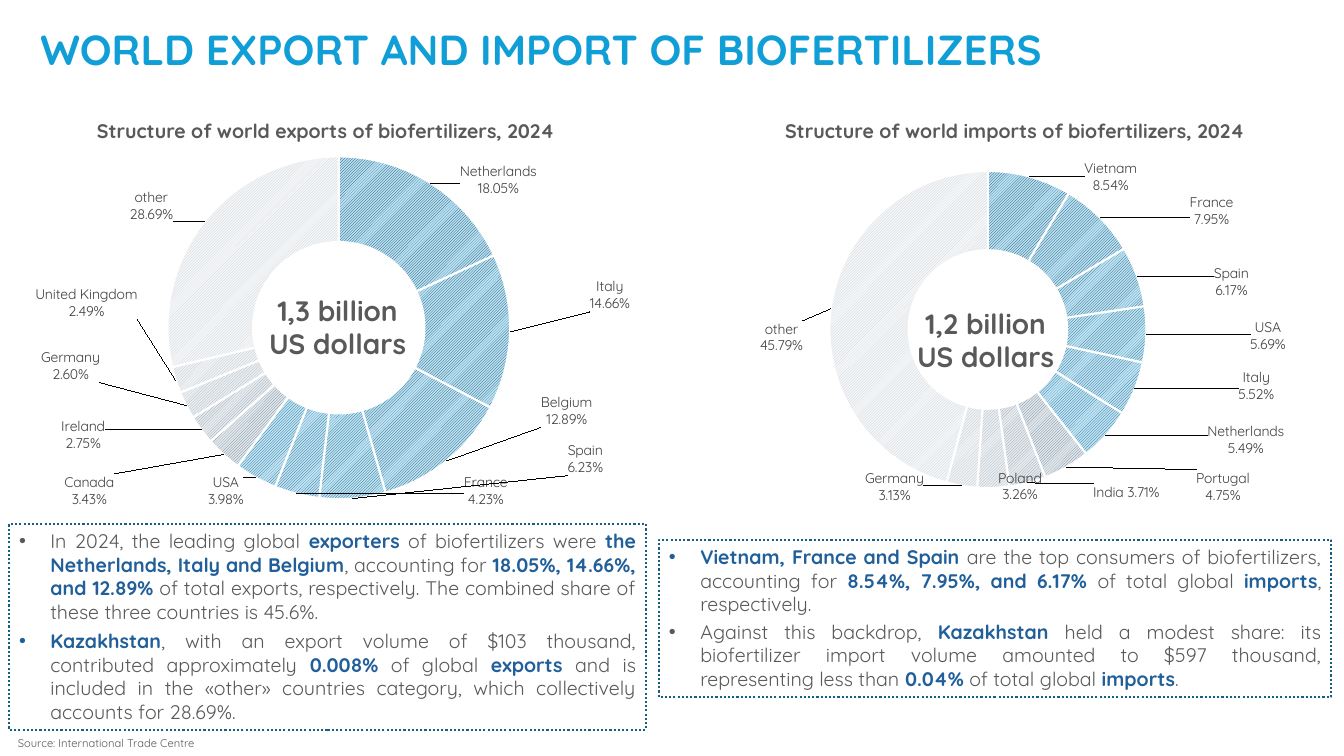
from itertools import accumulate
from math import cos, pi, sin

from lxml import etree
from pptx import Presentation
from pptx import util as u
from pptx.chart import data
from pptx.dml import color
from pptx.enum import chart as ch, dml, shapes, text
from pptx.oxml import parse_xml
from pptx.oxml.ns import nsdecls, qn

GREY, BLUE = "595959", "215F9A"


def rgb(code):
    return color.RGBColor.from_string(code)


def write(frame, lines, size, code=GREY, bold=False, align=text.PP_ALIGN.LEFT,
          bullet=False, after=0):
    """Fill a text frame; parts between asterisks are bold blue."""
    frame.word_wrap = True
    for n, line in enumerate(lines):
        paragraph = frame.paragraphs[0] if n == 0 else frame.add_paragraph()
        if bullet:
            props = paragraph._p.get_or_add_pPr()
            props.set("marL", str(u.Cm(0.79)))
            props.set("indent", str(-u.Cm(0.79)))
            etree.SubElement(props, qn("a:buFont")).set("typeface", "Arial")
            etree.SubElement(props, qn("a:buChar")).set("char", "•")
        paragraph.alignment = align
        paragraph.space_before, paragraph.space_after = u.Pt(0), u.Pt(after)
        for k, part in enumerate(line.split("*")):
            if part:
                run = paragraph.add_run()
                run.text = part
                look = {"name": "Quicksand", "size": u.Pt(size), "bold": bold or k % 2 == 1}
                for key, value in look.items():
                    setattr(run.font, key, value)
                run.font.color.rgb = rgb(BLUE if k % 2 else code)


prs = Presentation()
prs.slide_width, prs.slide_height = u.Cm(33.87), u.Cm(19.05)
slide = prs.slides.add_slide(prs.slide_layouts[5])

# Title
title = slide.shapes.title
title.left, title.top, title.width, title.height = map(u.Cm, (1.02, 0.58, 32.05, 1.32))
margins = {"margin_left": 0, "margin_right": 0, "margin_top": 0, "margin_bottom": 0,
           "vertical_anchor": text.MSO_ANCHOR.MIDDLE}
for key, value in margins.items():
    setattr(title.text_frame, key, value)
write(title.text_frame, ["WORLD EXPORT AND IMPORT OF BIOFERTILIZERS"], 30, "0F9ED5", True)

# Findings in dotted boxes
findings = [
    ((0.23, 13.21, 16.05, 5.18), 4, [
        "In 2024, the leading global *exporters* of biofertilizers were *the Netherlands, Italy "
        "and Belgium*, accounting for *18.05%, 14.66%, and 12.89%* of total exports, "
        "respectively. The combined share of these three countries is 45.6%.",
        "*Kazakhstan*, with an export volume of $103 thousand, contributed approximately "
        "*0.008%* of global *exports* and is included in the «other» countries category, "
        "which collectively accounts for 28.69%."]),
    ((16.61, 13.61, 16.94, 3.96), 3, [
        "*Vietnam, France and Spain *are the top consumers of biofertilizers, accounting for "
        "*8.54%, 7.95%, and 6.17% *of total global *imports*, respectively.",
        "Against this backdrop, *Kazakhstan* held a modest share: its biofertilizer import "
        "volume amounted to $597 thousand, representing less than *0.04%* of total global "
        "*imports*."]),
]
for place, after, lines in findings:
    box = slide.shapes.add_shape(shapes.MSO_SHAPE.RECTANGLE, *map(u.Cm, place))
    box.shadow.inherit = False
    box.fill.background()
    box.line.color.rgb = rgb("156082")
    box.line.width = u.Pt(1.5)
    box.line.dash_style = dml.MSO_LINE.ROUND_DOT
    box.text_frame.vertical_anchor = text.MSO_ANCHOR.TOP
    write(box.text_frame, lines, 14, align=text.PP_ALIGN.JUSTIFY, bullet=True, after=after)

# Chart headings, ring totals and source
CENTER, LEFT = text.PP_ALIGN.CENTER, text.PP_ALIGN.LEFT
captions = [
    ((0.38, 2.87, 15.67, 0.86), ["Structure of world exports of biofertilizers, 2024"], 14, True, CENTER),
    ((17.68, 2.87, 15.8, 0.86), ["Structure of world imports of biofertilizers, 2024"], 14, True, CENTER),
    ((6.25, 7.26, 4.52, 1.96), ["1,3 billion", "US dollars"], 20, True, CENTER),
    ((22.15, 7.59, 5.38, 1.96), ["1,2 billion", "US dollars"], 20, True, CENTER),
    ((0.2, 18.44, 21.31, 0.61), ["Source: International Trade Centre"], 8, False, LEFT),
]
for place, lines, size, bold, align in captions:
    caption = slide.shapes.add_textbox(*map(u.Cm, place))
    write(caption.text_frame, lines, size, bold=bold, align=align)

# Ring charts: country, share, label centre as fractions of the chart frame
exports = [
    ("Netherlands", 0.1805, 0.76, 0.10), ("Italy", 0.1466, 0.94, 0.41),
    ("Belgium", 0.1289, 0.87, 0.72), ("Spain", 0.0623, 0.90, 0.85),
    ("France", 0.0423, 0.74, 0.935), ("USA", 0.0398, 0.32, 0.935),
    ("Canada", 0.0343, 0.10, 0.935), ("Ireland", 0.0275, 0.09, 0.785),
    ("Germany", 0.026, 0.07, 0.60), ("United Kingdom", 0.0249, 0.095, 0.43),
    ("other", 0.2869, 0.20, 0.17),
]
imports = [
    ("Vietnam", 0.0854, 0.705, 0.05), ("France", 0.0795, 0.875, 0.14),
    ("Spain", 0.0617, 0.91, 0.33), ("USA", 0.0569, 0.97, 0.475),
    ("Italy", 0.0552, 0.95, 0.61), ("Netherlands", 0.0549, 0.93, 0.755),
    ("Portugal", 0.0475, 0.89, 0.88), ("India", 0.0371, 0.73, 0.895),
    ("Poland", 0.0326, 0.555, 0.88), ("Germany", 0.0313, 0.35, 0.88),
    ("other", 0.4579, 0.155, 0.48),
]
slice_colors = [
    ("0E4158", "B9E1F4"), ("104963", "BBE2F4"), ("11506C", "BDE3F4"), ("135573", "BEE4F5"),
    ("145B7B", "C0E4F5"), ("156082", "C1E5F5"), ("638097", "E0E6EA"), ("879AAA", "E7EBEE"),
    ("A2AFBB", "ECEFF1"), ("B6BFC8", "F0F2F4"), ("C9D0D6", "F4F6F7"),
]
LAYOUT = ("<c:layout %s><c:manualLayout>%s</c:manualLayout></c:layout>")
rings = [
    ((17.04, 3.99, 15.62, 9.4), imports, (0.227, 0.034, 0.552, 0.85)),
    ((0.69, 3.58, 15.62, 9.4), exports, (0.226, 0.038, 0.553, 0.92)),
]
for place, countries, (left, top, width, height) in rings:
    shares = data.CategoryChartData(number_format="0.00%")
    shares.categories = [country[0] for country in countries]
    values = [country[1] for country in countries]
    shares.add_series("Series 1", values)
    ring = slide.shapes.add_chart(ch.XL_CHART_TYPE.DOUGHNUT, *map(u.Cm, place), shares).chart
    ring.has_title = ring.has_legend = False
    ring.font.name, ring.font.size = "Roboto", u.Pt(10)
    plot = ring.plots[0]
    plot.vary_by_categories = True
    series = plot.series[0]

    # Plot area
    area = ring.element.find(".//" + qn("c:plotArea"))
    for old in area.findall(qn("c:layout")):
        area.remove(old)
    frame = '<c:layoutTarget val="inner"/><c:xMode val="edge"/><c:yMode val="edge"/>'
    frame += "".join(f'<c:{k} val="{v}"/>' for k, v in zip("xywh", (left, top, width, height)))
    area.insert(0, parse_xml(LAYOUT % (nsdecls("c"), frame)))

    # Slices and label fonts
    labels = series.data_labels
    labels.number_format, labels.number_format_is_linked = "0.00%", False
    labels.show_category_name = labels.show_value = True
    for n, (stripe, ground) in enumerate(slice_colors):
        point = series.points[n]
        point.format.fill.patterned()
        point.format.fill.pattern = dml.MSO_PATTERN.LIGHT_UPWARD_DIAGONAL
        point.format.fill.fore_color.rgb = rgb(stripe)
        point.format.fill.back_color.rgb = rgb(ground)
        point.format.line.color.rgb = rgb("FFFFFF")
        point.format.line.width = u.Pt(1.5)
        for font in (labels.font, point.data_label.font):
            font.name, font.size = "Quicksand", u.Pt(10)
            font.color.rgb = rgb("404040")

    # Labels moved from the middle of each slice to their own place
    slice_labels = area.iter(qn("c:dLbl"))
    for label, end, (name, share, x, y) in zip(slice_labels, accumulate(values), countries):
        angle = 2 * pi * (end - share / 2) / sum(values)
        dx = x - (left + width / 2 + 0.375 * width * sin(angle))
        dy = y - (top + height / 2 - 0.375 * height * cos(angle))
        shift = f'<c:x val="{dx:.3f}"/><c:y val="{dy:.3f}"/>'
        label.insert(1, parse_xml(LAYOUT % (nsdecls("c"), shift)))
        label.insert(2, parse_xml(
            f'<c:numFmt {nsdecls("c")} formatCode="0.00%" sourceLinked="0"/>'))
        label.find(qn("c:showCatName")).set("val", "1")
        etree.SubElement(label, qn("c:separator")).text = " " if name == "India" else "\n"

prs.save("out.pptx")
